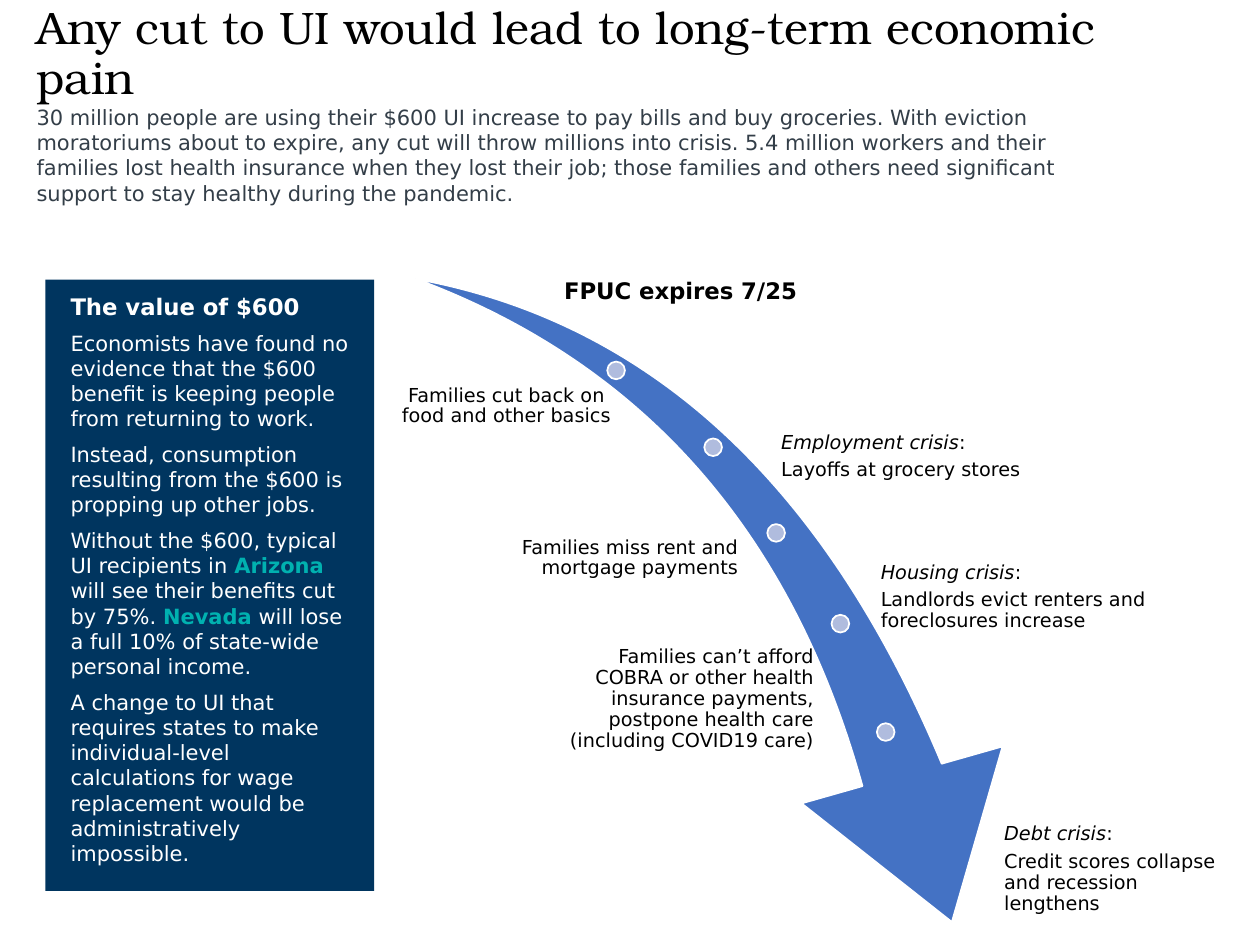
from dataclasses import dataclass

from pptx import Presentation
from pptx import util as u
from pptx.dml.color import RGBColor
from pptx.enum import shapes, text
from pptx.oxml.ns import qn
from lxml import etree

CELL = 0.1
LEFT, CENTER, RIGHT = text.PP_ALIGN.LEFT, text.PP_ALIGN.CENTER, text.PP_ALIGN.RIGHT
TOP, MIDDLE, BOTTOM = text.MSO_ANCHOR.TOP, text.MSO_ANCHOR.MIDDLE, text.MSO_ANCHOR.BOTTOM


@dataclass(frozen=True)
class Theme:
    serif: str = "TeX Gyre Bonum"
    sans: str = "DejaVu Sans"
    title: float = 26
    heading: float = 13
    body: float = 12
    label: float = 11
    black: str = "000000"
    white: str = "FFFFFF"
    slate: str = "333E48"
    navy: str = "00355F"
    teal: str = "00B1B0"
    blue: str = "4472C4"
    pale: str = "B0BCDE"


@dataclass(frozen=True)
class Box:
    col: float
    row: float
    cols: float
    rows: float

    def sub(self, col, row, cols, rows):
        return Box(self.col + col, self.row + row, cols, rows)

    def emu(self):
        return [u.Inches(v * CELL) for v in (self.col, self.row, self.cols, self.rows)]


T = Theme()


def write(tf, paras, size=T.body, font=T.sans, color=T.black, align=LEFT,
          anchor=TOP, inset=(0.1, 0.05, 0.1, 0.05), line=1.0, before=0, after=0):
    tf.word_wrap = True
    tf.auto_size = text.MSO_AUTO_SIZE.NONE
    tf.vertical_anchor = anchor
    tf.margin_left, tf.margin_top, tf.margin_right, tf.margin_bottom = map(u.Inches, inset)
    for i, runs in enumerate(paras):
        p = tf.paragraphs[0] if i == 0 else tf.add_paragraph()
        p.alignment, p.line_spacing = align, line
        p.space_before = u.Pt(before if i else 0)
        p.space_after = u.Pt(after)
        for run in [runs] if isinstance(runs, str) else runs:
            words, fmt = (run, {}) if isinstance(run, str) else run
            r = p.add_run()
            r.text = words
            r.font.name = font
            r.font.size = u.Pt(fmt.get("size", size))
            r.font.bold = fmt.get("bold", False)
            r.font.italic = fmt.get("italic", False)
            r.font.color.rgb = RGBColor.from_string(fmt.get("color", color))


def place(sp, box):
    sp.left, sp.top, sp.width, sp.height = box.emu()


def add_shape(s, kind, box, fill, line=None):
    sp = s.shapes.add_shape(kind, *box.emu())
    sp.shadow.inherit = False
    sp.fill.solid()
    sp.fill.fore_color.rgb = RGBColor.from_string(fill)
    if line:
        sp.line.color.rgb = RGBColor.from_string(line)
        sp.line.width = u.Pt(1)
    else:
        sp.line.fill.background()
    return sp


def header(s, box):
    title, body = s.shapes.title, s.placeholders[1]
    place(title, box.sub(0, 0, box.cols, 8.7))
    write(title.text_frame, ["Any cut to UI would lead to long-term economic pain"],
          size=T.title, font=T.serif, anchor=MIDDLE, line=0.9)
    place(body, box.sub(0, 7.8, 86.8, 9.1))
    write(body.text_frame, [
        "30 million people are using their $600 UI increase to pay bills and buy groceries. "
        "With eviction moratoriums about to expire, any cut will throw millions into crisis. "
        "5.4 million workers and their families lost health insurance when they lost their job; "
        "those families and others need significant support to stay healthy during the pandemic."],
        color=T.slate)
    pPr = body.text_frame.paragraphs[0]._p.get_or_add_pPr()
    pPr.set("marL", "0")
    pPr.set("indent", "0")
    etree.SubElement(pPr, qn("a:buNone"))


def value_panel(s, box):
    sp = add_shape(s, shapes.MSO_SHAPE.RECTANGLE, box, T.navy)
    state = {"color": T.teal, "bold": True}
    write(sp.text_frame, [
        [("The value of $600", {"size": T.heading, "bold": True})],
        "Economists have found no evidence that the $600 benefit is keeping people "
        "from returning to work.",
        "Instead, consumption resulting from the $600 is propping up other jobs.",
        ["Without the $600, typical UI recipients in ", ("Arizona", state),
         " will see their benefits cut by 75%. ", ("Nevada", state),
         " will lose a full 10% of state-wide personal income."],
        "A change to UI that requires states to make individual-level calculations "
        "for wage replacement would be administratively impossible."],
        color=T.white, inset=(0.2, 0.1, 0.2, 0.2), before=6)


def label(s, box, paras, after=4, anchor=MIDDLE, **fmt):
    tf = s.shapes.add_textbox(*box.emu()).text_frame
    write(tf, paras, size=T.label, inset=(0.02,) * 4, line=0.9,
          after=after, anchor=anchor, **fmt)


def crisis_path(s, box):
    arrow = add_shape(s, shapes.MSO_SHAPE.SWOOSH_ARROW, box.sub(4.7, 5.2, 57.3, 39.9),
                      T.blue, T.white)
    arrow.rotation = 80.6
    arrow.adjustments[0], arrow.adjustments[1] = 0.163, 0.314 
    for col, row in [(24.2, 6.7), (31.9, 12.8), (36.9, 19.6), (42, 26.8), (45.6, 35.4)]:
        add_shape(s, shapes.MSO_SHAPE.OVAL, box.sub(col, row, 1.4, 1.4), T.pale, T.white)

    label(s, box.sub(18.2, 0.3, 23.6, 2.1),
          [[("FPUC expires 7/25", {"size": T.heading, "bold": True})]],
          align=CENTER, anchor=BOTTOM)

    label(s, box.sub(0.3, 7.4, 24.4, 5.7),
          ["Families cut back on ", "food and other basics"], align=RIGHT, after=0)
    for area, words in [
        ((12.1, 19.6, 22.7, 5.4), "Families miss rent and mortgage payments"),
        ((19.6, 28.2, 21.2, 10.6), "Families can’t afford COBRA or other health insurance "
                                   "payments, postpone health care (including COVID19 care)"),
    ]:
        label(s, box.sub(*area), [words], align=RIGHT)

    for area, name, words, anchor in [
        ((37.8, 11.5, 24.8, 5.5), "Employment crisis", "Layoffs at grocery stores", MIDDLE),
        ((45.7, 22.2, 28.5, 6.4), "Housing crisis",
         "Landlords evict renters and foreclosures increase", MIDDLE),
        ((55.5, 43.2, 18.6, 10.6), "Debt crisis",
         "Credit scores collapse and recession lengthens", TOP),
    ]:
        label(s, box.sub(*area), [[(name, {"italic": True}), ":"], words], anchor=anchor)


def main():
    prs = Presentation()
    prs.slide_width, prs.slide_height = u.Inches(10), u.Inches(7.5)
    s = prs.slides.add_slide(prs.slide_layouts[1])
    header(s, Box(1.9, 0, 91.2, 16.9))
    value_panel(s, Box(3.6, 22.2, 26.1, 48.5))
    crisis_path(s, Box(24, 22, 74.2, 53))
    prs.save("out.pptx")


if __name__ == "__main__":
    main()
